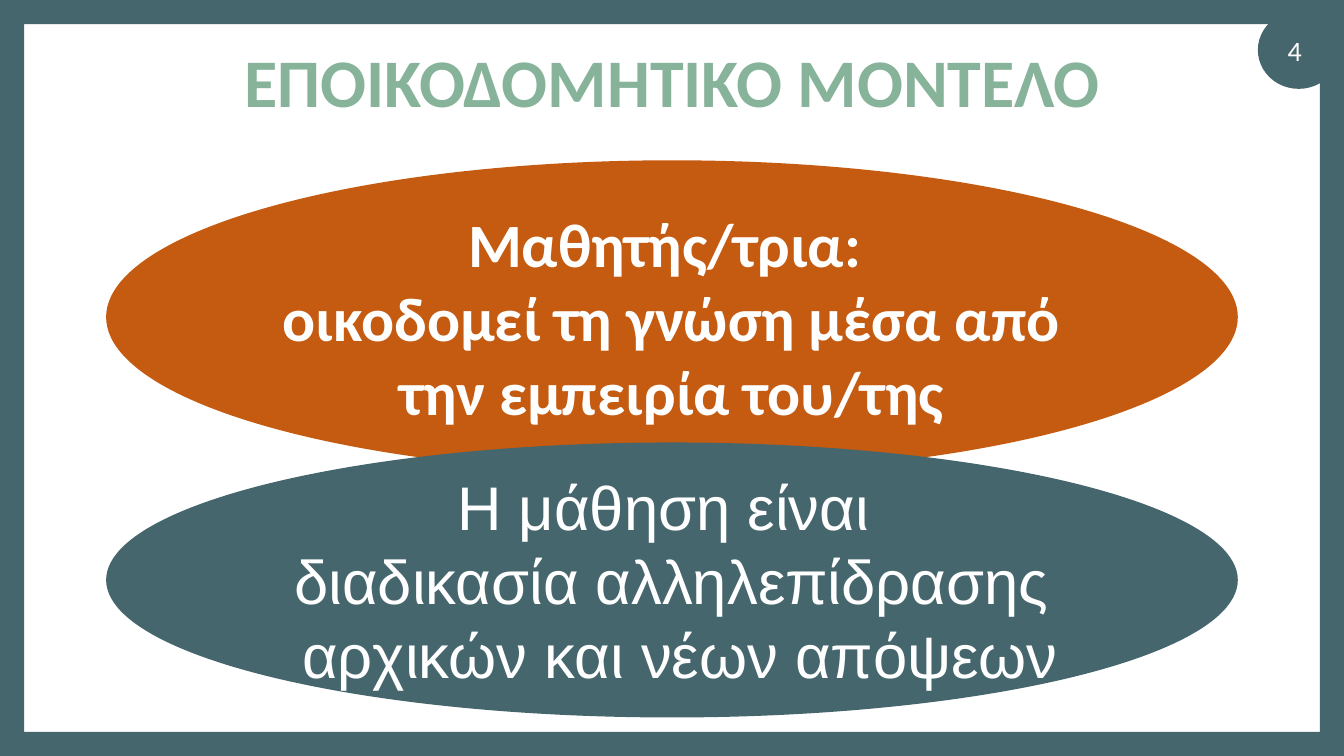
from pptx import Presentation
from pptx.dml.color import RGBColor
from pptx.enum.shapes import MSO_SHAPE
from pptx.enum.text import MSO_ANCHOR, PP_ALIGN
from pptx.util import Cm, Pt

THEME = {
    "teal": RGBColor.from_string("46666D"),
    "orange": RGBColor.from_string("C55A11"),
    "green": RGBColor.from_string("87B39A"),
    "white": RGBColor.from_string("FFFFFF"),
    "title": Pt(48.6),
    "statement": Pt(44),
    "number": Pt(20),
}

TITLE = ["ΕΠΟΙΚΟΔΟΜΗΤΙΚΟ ΜΟΝΤΕΛΟ"]
PAGE_NUMBER = ["4"]
LEARNER = ["Μαθητής/τρια: ", "οικοδομεί τη γνώση μέσα από ", "την εμπειρία του/της"]
LEARNING = ["Η μάθηση είναι ", "διαδικασία αλληλεπίδρασης", " αρχικών και νέων απόψεων"]

WIDTH, HEIGHT = 33.87, 19.05
BORDER = 0.61
OVAL_WIDTH = 28.52
TITLE_WIDTH = 29.21

STATEMENTS = [
    (LEARNER, 4.04, 7.9, "orange", {"name": "Calibri", "bold": True}),
    (LEARNING, 11.15, 6.93, "teal", {"name": "Arial", "bold": False}),
]


def add_filled(slide, kind, box, color):
    shape = slide.shapes.add_shape(kind, *map(Cm, box))
    shape.shadow.inherit = False
    shape.fill.solid()
    shape.fill.fore_color.rgb = THEME[color]
    shape.line.fill.background()
    return shape


def write(shape, lines, size, color, face, spacing=1.0):
    frame = shape.text_frame
    frame.word_wrap = True
    frame.vertical_anchor = MSO_ANCHOR.MIDDLE
    for index, line in enumerate(lines):
        paragraph = frame.paragraphs[0] if index == 0 else frame.add_paragraph()
        paragraph.alignment = PP_ALIGN.CENTER
        paragraph.line_spacing = spacing
        run = paragraph.add_run()
        run.text = line
        for attribute, value in {"size": THEME[size], **face}.items():
            setattr(run.font, attribute, value)
        run.font.color.rgb = THEME[color]


def main():
    deck = Presentation()
    deck.slide_width, deck.slide_height = Cm(WIDTH), Cm(HEIGHT)
    slide = deck.slides.add_slide(deck.slide_layouts[6])

    add_filled(slide, MSO_SHAPE.OVAL, (31.7, 0.28, 2.06, 1.96), "teal")
    frame_bars = [
        (0, 0, WIDTH, BORDER),
        (0, HEIGHT - BORDER, WIDTH, BORDER),
        (0, 0, BORDER, HEIGHT),
        (WIDTH - BORDER, 0, BORDER, HEIGHT),
    ]
    for bar in frame_bars:
        add_filled(slide, MSO_SHAPE.RECTANGLE, bar, "teal")

    number = slide.shapes.add_textbox(*map(Cm, (31.6, 0.76, 2.06, 1.02)))
    write(number, PAGE_NUMBER, "number", "white", {"name": "Calibri"})

    for lines, top, height, color, face in STATEMENTS:
        box = ((WIDTH - OVAL_WIDTH) / 2, top, OVAL_WIDTH, height)
        oval = add_filled(slide, MSO_SHAPE.OVAL, box, color)
        write(oval, lines, "statement", "white", face)

    title_box = ((WIDTH - TITLE_WIDTH) / 2, 1.02, TITLE_WIDTH, 2.26)
    title = slide.shapes.add_textbox(*map(Cm, title_box))
    write(title, TITLE, "title", "green", {"name": "Calibri", "bold": True}, 0.9)

    deck.save("out.pptx")


if __name__ == "__main__":
    main()
